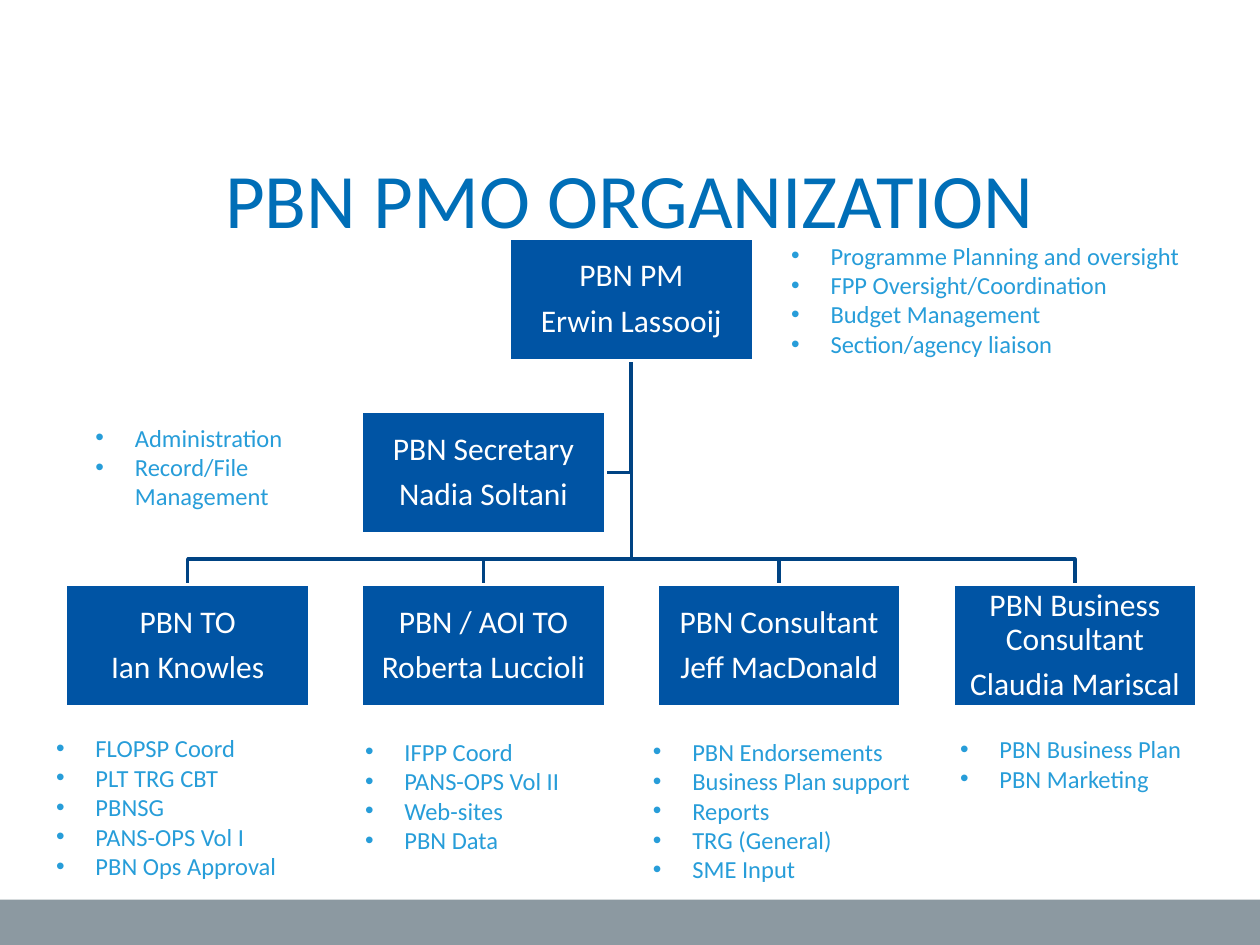
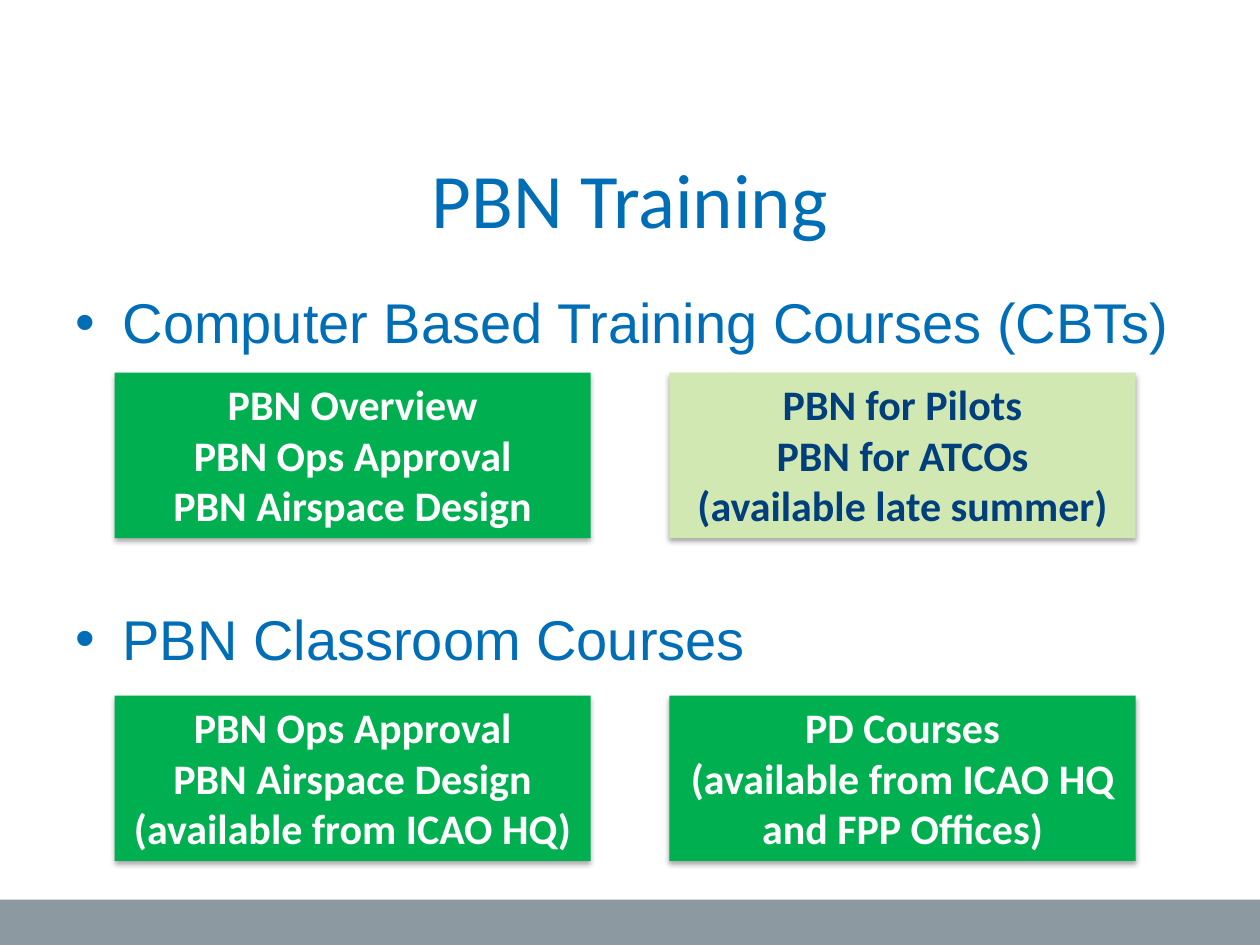
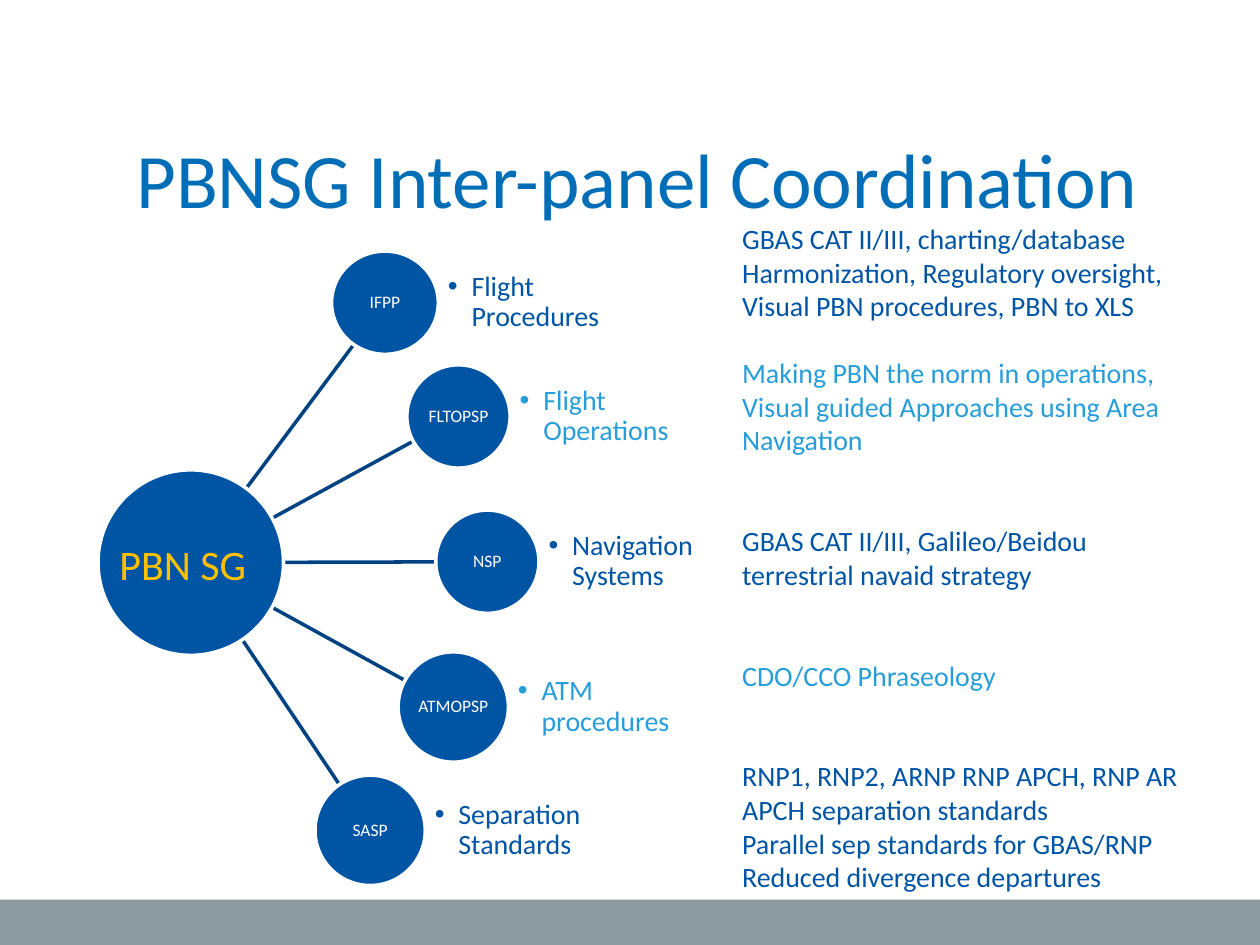
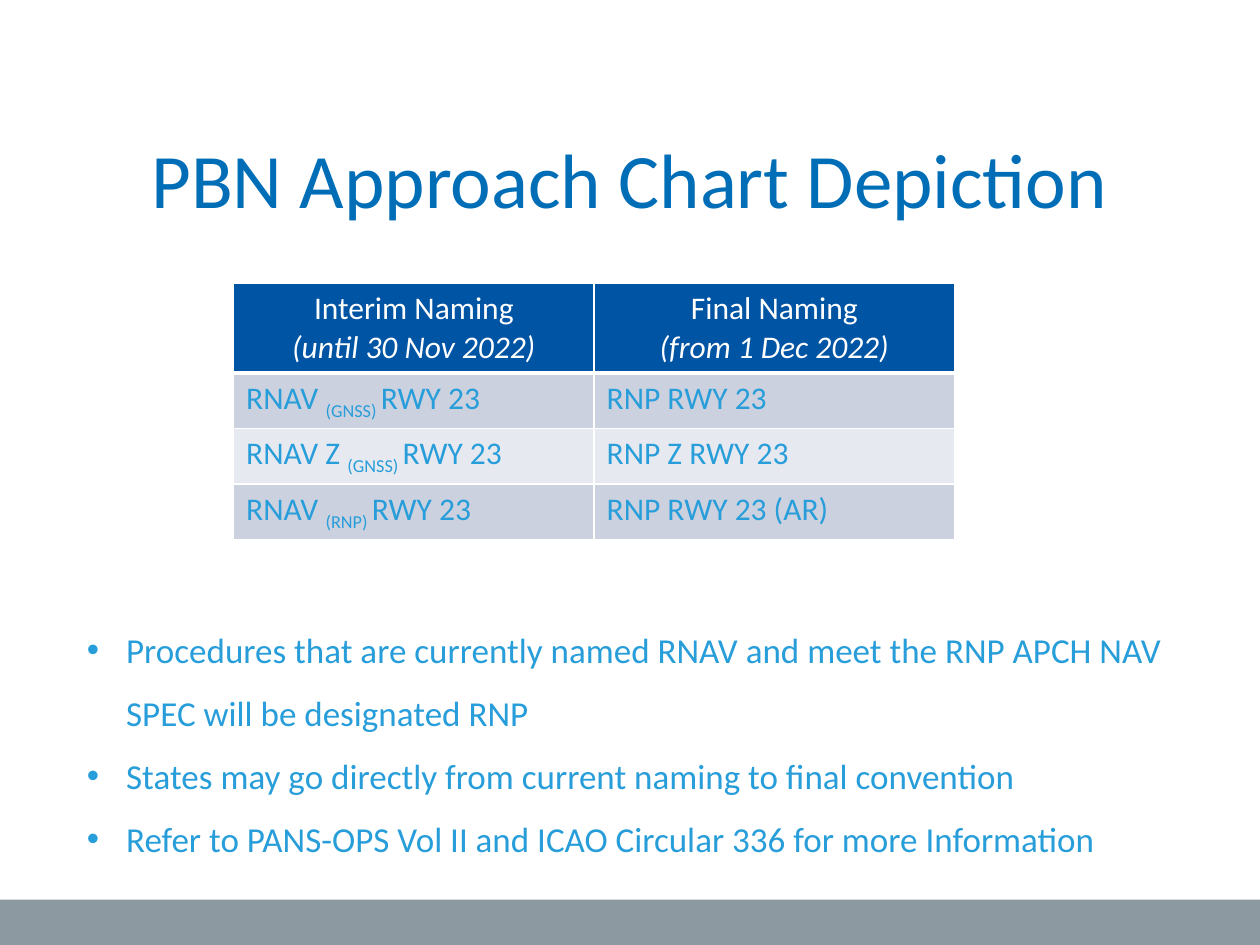
from dataclasses import dataclass
from math import hypot

from lxml.etree import SubElement
from pptx import Presentation
from pptx.dml.color import RGBColor
from pptx.enum.shapes import MSO_CONNECTOR as Connector, MSO_SHAPE as Preset
from pptx.enum.text import MSO_ANCHOR as Anchor, MSO_AUTO_SIZE as AutoSize, PP_ALIGN as Align
from pptx.oxml.ns import qn
from pptx.util import Pt


@dataclass(frozen=True)
class Theme:
    title: str = "006EB7"
    navy: str = "0054A4"
    line: str = "004383"
    sky: str = "279DD9"
    white: str = "FFFFFF"
    band: str = "8C99A1"
    green: str = "00B050"
    pale_green: str = "D1E8B2"
    dark_text: str = "003F7B"
    amber: str = "FFC000"
    row_dark: str = "CCD1E0"
    row_light: str = "E7E9F0"
    font: str = "Calibri"
    body_font: str = "Arial"
    title_size: int = 44
    heading_size: int = 32
    card_size: int = 24
    point_size: int = 20
    box_size: int = 18
    note_size: int = 16
    list_size: int = 14
    node_size: int = 10


THEME = Theme()
SLIDE_WIDTH, SLIDE_HEIGHT, BAND_TOP = 720, 540, 514

MANAGER = ["PBN PM", "Erwin Lassooij"]
SECRETARY = ["PBN Secretary", "Nadia Soltani"]
TEAM = [
    ["PBN TO", "Ian Knowles"],
    ["PBN / AOI TO", "Roberta Luccioli"],
    ["PBN Consultant", "Jeff MacDonald"],
    ["PBN Business Consultant", "Claudia Mariscal"],
]
DUTIES = [
    ((25, 415.5, 199, 94), ["FLOPSP Coord", "PLT TRG CBT", "PBNSG", "PANS-OPS Vol I",
                            "PBN Ops Approval"]),
    ((201.5, 417.5, 142, 75), ["IFPP Coord", "PANS-OPS Vol II", "Web-sites", "PBN Data"]),
    ((541.5, 416, 178, 41), ["PBN Business Plan", "PBN Marketing"]),
    ((366, 417.5, 184, 92), ["PBN Endorsements", "Business Plan support", "Reports",
                             "TRG (General)", "SME Input"]),
    ((445, 134, 249, 75), ["Programme Planning and oversight", "FPP Oversight/Coordination",
                           "Budget Management", "Section/agency liaison"]),
    ((47.5, 238, 141, 58), ["Administration", "Record/File Management"]),
]

COURSE_HEADINGS = ["Computer Based Training Courses (CBTs)", "PBN Classroom Courses"]
COURSES = [
    [(["PBN Overview", "PBN Ops Approval", "PBN Airspace Design"], THEME.green, THEME.white),
     (["PBN for Pilots", "PBN for ATCOs", "(available late summer)"],
      THEME.pale_green, THEME.dark_text)],
    [(["PBN Ops Approval", "PBN Airspace Design", "(available from ICAO HQ)"],
      THEME.green, THEME.white),
     (["PD Courses", "(available from ICAO HQ and FPP Offices)"], THEME.green, THEME.white)],
]

PANELS = [
    ("IFPP", "Flight Procedures", THEME.navy, (189.5, 143.5, 61, 59)),
    ("FLTOPSP", "Flight Operations", THEME.sky, (232.5, 208.5, 59, 59)),
    ("NSP", "Navigation Systems", THEME.navy, (249, 291.5, 59, 59)),
    ("ATMOPSP", "ATM procedures", THEME.sky, (227.5, 372.5, 63, 63)),
    ("SASP", "Separation Standards", THEME.navy, (180, 443, 63, 63)),
]
WORK_ITEMS = [
    (0, THEME.navy, ["GBAS CAT II/III, charting/database Harmonization, Regulatory oversight,",
                     "Visual PBN procedures, PBN to XLS"]),
    (1, THEME.sky, ["Making PBN the norm in operations,",
                    "Visual guided Approaches using Area Navigation"]),
    (2, THEME.navy, ["GBAS CAT II/III, Galileo/Beidou terrestrial navaid strategy"]),
    (2, THEME.sky, ["CDO/CCO Phraseology"]),
    (2, THEME.navy, ["RNP1, RNP2, ARNP RNP APCH, RNP AR APCH separation standards",
                     "Parallel sep standards for GBAS/RNP", "Reduced divergence departures"]),
]

NAMING_HEADER = [("Interim Naming", "(until 30 Nov 2022)"), ("Final Naming", "(from 1 Dec 2022)")]
NAMING_ROWS = [
    (("RNAV ", "(GNSS) ", "RWY 23"), "RNP RWY 23"),
    (("RNAV Z ", "(GNSS) ", "RWY 23"), "RNP Z RWY 23"),
    (("RNAV ", "(RNP) ", "RWY 23"), "RNP RWY 23 (AR)"),
]
NAMING_POINTS = [
    "Procedures that are currently named RNAV and meet the RNP APCH NAV SPEC will be designated RNP",
    "States may go directly from current naming to final convention",
    "Refer to PANS-OPS Vol II and ICAO Circular 336 for more Information",
]


def points(*values):
    return [Pt(value) for value in values]


def rgb(color):
    return RGBColor.from_string(color)


def add_run(paragraph, text, size, color, font=THEME.font, bold=False, italic=False):
    run = paragraph.add_run()
    run.text = text
    run.font.name = font
    run.font.size = Pt(size)
    run.font.bold = bold
    run.font.italic = italic
    run.font.color.rgb = rgb(color)
    return run


def add_bullet(paragraph, indent):
    properties = paragraph._p.get_or_add_pPr()
    properties.set("marL", str(Pt(indent)))
    properties.set("indent", str(-Pt(indent)))
    SubElement(properties, qn("a:buFont"), typeface="Arial")
    SubElement(properties, qn("a:buChar"), char="•")


def next_paragraph(frame):
    first = frame.paragraphs[0]
    return frame.add_paragraph() if first.runs else first


def write(frame, lines, size, color, align=Align.LEFT, bullet=0, spacing=None, after=None,
          before=None, **style):
    frame.word_wrap = True
    for line in lines:
        paragraph = next_paragraph(frame)
        if bullet:
            add_bullet(paragraph, bullet)
        paragraph.alignment = align
        if spacing:
            paragraph.line_spacing = spacing
        if after:
            paragraph.space_after = Pt(after)
        if before and frame.paragraphs[0].runs:
            paragraph.space_before = Pt(before)
        before = before if bullet else None
        add_run(paragraph, line, size, color, **style)


def set_margins(frame, margin):
    frame.margin_left = frame.margin_right = frame.margin_top = frame.margin_bottom = Pt(margin)


def add_text(slide, box, lines, size, color, **options):
    frame = slide.shapes.add_textbox(*points(*box)).text_frame
    write(frame, lines, size, color, **options)
    return frame


def add_filled(slide, preset, box, fill, outline=None):
    shape = slide.shapes.add_shape(preset, *points(*box))
    shape.shadow.inherit = False
    shape.fill.solid()
    shape.fill.fore_color.rgb = rgb(fill)
    if outline:
        shape.line.color.rgb = rgb(outline)
        shape.line.width = Pt(2)
    else:
        shape.line.fill.background()
    return shape


def add_node(slide, preset, box, lines, size):
    shape = add_filled(slide, preset, box, THEME.navy, THEME.white)
    frame = shape.text_frame
    set_margins(frame, 0.8)
    frame.vertical_anchor = Anchor.MIDDLE
    write(frame, lines, size, THEME.white, align=Align.CENTER, spacing=0.9, after=0.35 * size)


def add_titled_slide(presentation, text, box):
    slide = presentation.slides.add_slide(presentation.slide_layouts[5])
    title = slide.shapes.title
    title.left, title.top, title.width, title.height = points(*box)
    frame = title.text_frame
    frame.auto_size = AutoSize.NONE
    frame.vertical_anchor = Anchor.TOP
    write(frame, [text], THEME.title_size, THEME.title, align=Align.CENTER)
    return slide


def share_band(presentation, slide):
    box = (0, BAND_TOP, SLIDE_WIDTH, SLIDE_HEIGHT - BAND_TOP)
    band = add_filled(slide, Preset.RECTANGLE, box, THEME.band)
    presentation.slide_layouts[5].shapes.element.insert(2, band.element)


def add_branch(slide, corners):
    start, *rest = [tuple(points(*corner)) for corner in corners]
    builder = slide.shapes.build_freeform(*start)
    builder.add_line_segments(rest, close=False)
    branch = builder.convert_to_shape()
    branch.shadow.inherit = False
    branch.fill.background()
    branch.line.color.rgb = rgb(THEME.line)
    branch.line.width = Pt(2)


def build_organization(presentation):
    slide = add_titled_slide(presentation, "PBN PMO ORGANIZATION", (36, 83, 648, 90))
    share_band(presentation, slide)
    width, height, pitch, left = 139.5, 70, 169, 37.5
    manager_top, secretary_top, team_top, bus = 136, 235, 334, 319.5
    columns = [left + pitch * index for index in range(len(TEAM))]
    manager_left = sum(columns) / len(columns)
    trunk, trunk_top = manager_left + width / 2, manager_top + height
    secretary_middle = secretary_top + height / 2

    add_branch(slide, [(trunk, trunk_top), (trunk, secretary_middle),
                       (columns[1] + width, secretary_middle)])
    for column in columns:
        center = column + width / 2
        add_branch(slide, [(trunk, trunk_top), (trunk, bus), (center, bus), (center, team_top)])

    boxes = [(manager_left, manager_top, MANAGER), (columns[1], secretary_top, SECRETARY)]
    boxes += [(column, team_top, member) for column, member in zip(columns, TEAM)]
    for x, y, lines in boxes:
        add_node(slide, Preset.RECTANGLE, (x, y, width, height), lines, THEME.box_size)
    for box, duties in DUTIES:
        add_text(slide, box, duties, THEME.list_size, THEME.sky, bullet=22.5)


def add_card_shadow(shape):
    effects = shape.element.spPr.find(qn("a:effectLst"))
    shadow = SubElement(effects, qn("a:outerShdw"), blurRad=str(Pt(3.1)), dist=str(Pt(1.8)),
                        dir="5400000", rotWithShape="0")
    color = SubElement(shadow, qn("a:srgbClr"), val="000000")
    SubElement(color, qn("a:alpha"), val="35000")


def build_training(presentation):
    slide = add_titled_slide(presentation, "PBN Training", (36, 83, 648, 90))
    add_text(slide, (36, 161, 648, 325), COURSE_HEADINGS, THEME.heading_size, THEME.title,
             bullet=27, before=142.6, font=THEME.body_font)
    for top, cards in zip((213, 397.5), COURSES):
        for (left, width), (lines, fill, color) in zip(((65.5, 272), (382.5, 266.5)), cards):
            card = add_filled(slide, Preset.RECTANGLE, (left, top, width, 94.5), fill)
            add_card_shadow(card)
            card.text_frame.vertical_anchor = Anchor.TOP
            write(card.text_frame, lines, THEME.card_size, color, align=Align.CENTER, bold=True)


def add_spoke(slide, hub, start_radius, node):
    left, top, width, height = node
    dx, dy = left + width / 2 - hub[0], top + height / 2 - hub[1]
    distance = hypot(dx, dy)
    ends = []
    for reach in (start_radius, distance - height / 2):
        ends += [hub[0] + dx * reach / distance, hub[1] + dy * reach / distance]
    spoke = slide.shapes.add_connector(Connector.STRAIGHT, *points(*ends))
    spoke.line.color.rgb = rgb(THEME.line)
    spoke.line.width = Pt(2)
    SubElement(spoke.element.spPr, qn("a:effectLst"))


def build_coordination(presentation):
    slide = add_titled_slide(presentation, "PBNSG Inter-panel Coordination", (8.5, 71.5, 711.5, 62.5))
    hub_left, hub_top, hub_size = 56, 268.5, 106
    hub = hub_left + hub_size / 2, hub_top + hub_size / 2
    for *_, node in PANELS:
        add_spoke(slide, hub, 42, node)
    add_filled(slide, Preset.OVAL, (hub_left, hub_top, hub_size, hub_size), THEME.navy, THEME.white)
    for name, topic, color, node in PANELS:
        left, top, width, height = node
        add_node(slide, Preset.OVAL, node, [name], THEME.node_size)
        label = add_text(slide, (left + width + 5.5, top, 1.5 * width, height), [topic],
                         THEME.note_size, color, bullet=13.5, spacing=0.9, after=2.4)
        set_margins(label, 0)
        label.vertical_anchor = Anchor.MIDDLE
    add_text(slide, (48, 304, 113, 36), ["PBN SG"], THEME.card_size, THEME.amber,
             align=Align.CENTER)
    notes = slide.shapes.add_textbox(*points(417, 123, 278, 395)).text_frame
    for gap_lines, color, lines in WORK_ITEMS:
        write(notes, lines, THEME.note_size, color, before=gap_lines * 19.2)


def border_cell(cell, bottom):
    properties = cell._tc.get_or_add_tcPr()
    for index, side in enumerate(("lnL", "lnR", "lnT", "lnB")):
        border = SubElement(properties, qn("a:" + side), w=str(Pt(bottom if side == "lnB" else 1)))
        SubElement(SubElement(border, qn("a:solidFill")), qn("a:srgbClr"), val=THEME.white)
        properties.insert(index, border)


def fill_cell(cell, color, bottom=1):
    cell.fill.solid()
    cell.fill.fore_color.rgb = rgb(color)
    border_cell(cell, bottom)


def add_naming_table(slide):
    heights = [50] + [31.7] * len(NAMING_ROWS)
    table = slide.shapes.add_table(len(heights), 2, *points(133.5, 162, 412, sum(heights))).table
    for row, height in zip(table.rows, heights):
        row.height = Pt(height)
    for column, (heading, period) in enumerate(NAMING_HEADER):
        cell = table.cell(0, column)
        fill_cell(cell, THEME.navy, bottom=3)
        write(cell.text_frame, [heading], THEME.box_size, THEME.white, align=Align.CENTER)
        write(cell.text_frame, [period], THEME.box_size, THEME.white, align=Align.CENTER, italic=True)
    for index, (interim, final) in enumerate(NAMING_ROWS, 1):
        fill = THEME.row_dark if index % 2 else THEME.row_light
        for column in range(2):
            fill_cell(table.cell(index, column), fill)
        paragraph = table.cell(index, 0).text_frame.paragraphs[0]
        runs = [add_run(paragraph, text, THEME.box_size, THEME.sky) for text in interim]
        runs[1].font._element.set("baseline", "-25000")
        write(table.cell(index, 1).text_frame, [final], THEME.box_size, THEME.sky)


def build_depiction(presentation):
    slide = add_titled_slide(presentation, "PBN Approach Chart Depiction", (0, 71.5, 720, 73.5))
    add_naming_table(slide)
    add_text(slide, (42.5, 343.5, 657.5, 152.5), NAMING_POINTS, THEME.point_size, THEME.sky,
             bullet=22.5, spacing=1.5)


def main():
    presentation = Presentation()
    presentation.slide_width, presentation.slide_height = points(SLIDE_WIDTH, SLIDE_HEIGHT)
    build_organization(presentation)
    build_training(presentation)
    build_coordination(presentation)
    build_depiction(presentation)
    presentation.save("out.pptx")


if __name__ == "__main__":
    main()
